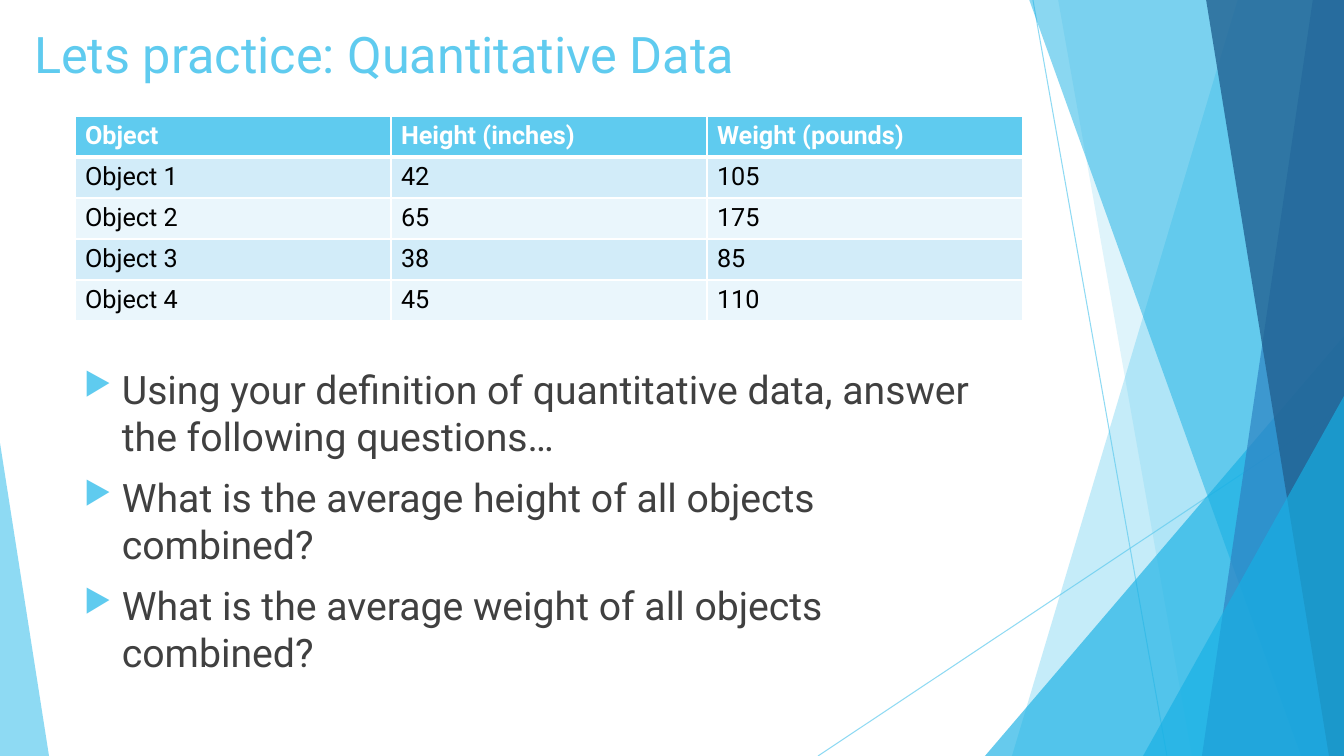
from lxml import etree
from pptx import Presentation
from pptx.dml.color import RGBColor
from pptx.enum.shapes import MSO_CONNECTOR, MSO_SHAPE
from pptx.enum.text import MSO_ANCHOR, MSO_AUTO_SIZE, PP_ALIGN
from pptx.oxml.ns import qn
from pptx.util import Emu, Pt

STRAIGHT = MSO_CONNECTOR.STRAIGHT
TRIANGLE = MSO_SHAPE.ISOSCELES_TRIANGLE
TOP = MSO_ANCHOR.TOP
LEFT = PP_ALIGN.LEFT
NO_AUTOFIT = MSO_AUTO_SIZE.NONE

WIDTH, HEIGHT = 1344, 756
TITLE_ONLY = 5
COLORS = {
    "sky": "5FCBEF",
    "azure": "17B0E4",
    "blue": "2E83C3",
    "navy": "226292",
    "ink": "404040",
    "black": "000000",
    "white": "FFFFFF",
    "band": "D2ECF9",
    "pale": "EAF6FC",
}


def px(length):
    return Emu(round(length * 12192000 / WIDTH))


def rgb(name):
    return RGBColor.from_string(COLORS[name])


class SlideBuilder:
    font_name = "Roboto"

    def __init__(self, slide):
        self.slide = slide
        self.shapes = slide.shapes

    def style_font(self, paragraph, size, color, bold=False):
        font = paragraph.font
        font.name = self.font_name
        font.size = Pt(size)
        font.bold = bold
        font.color.rgb = rgb(color)

    def set_alpha(self, element, percent):
        for color in element.spPr.iter(qn("a:srgbClr")):
            etree.SubElement(color, qn("a:alpha"), val=str(percent * 1000))

    def paint(self, shape, color, opacity):
        shape.shadow.inherit = False
        shape.fill.solid()
        shape.fill.fore_color.rgb = rgb(color)
        shape.line.fill.background()
        self.set_alpha(shape._element, opacity)

    def ray(self, x1, y1, x2, y2):
        ray = self.shapes.add_connector(STRAIGHT, px(x1), px(y1), px(x2), px(y2))
        ray.line.color.rgb = rgb("sky")
        ray.line.width = Pt(0.75)
        self.set_alpha(ray._element, 70)
        etree.SubElement(ray._element.spPr, qn("a:effectLst"))

    def shard(self, top_x, bottom_x, color, opacity):
        outline = self.shapes.build_freeform(px(top_x), px(-1))
        corners = [(WIDTH, -1), (WIDTH, HEIGHT), (bottom_x, HEIGHT)]
        outline.add_line_segments([(px(x), px(y)) for x, y in corners])
        self.paint(outline.convert_to_shape(), color, opacity)

    def wedge(self, left, top, width, apex, color, opacity):
        wedge = self.shapes.add_shape(
            TRIANGLE, px(left), px(top), px(width), px(HEIGHT - top)
        )
        wedge.adjustments[0] = apex
        self.paint(wedge, color, opacity)

    def title(self, text, left, top, width, height):
        title = self.shapes.title
        title.left, title.top = px(left), px(top)
        title.width, title.height = px(width), px(height)
        frame = title.text_frame
        frame.text = text
        frame.word_wrap = True
        frame.auto_size = NO_AUTOFIT
        frame.vertical_anchor = TOP
        frame.paragraphs[0].alignment = LEFT
        self.style_font(frame.paragraphs[0], 36, "sky")

    def cell_borders(self, cell, bottom_width):
        properties = cell._tc.get_or_add_tcPr()
        for side, width in (("L", 1), ("R", 1), ("T", 1), ("B", bottom_width)):
            line = etree.SubElement(properties, qn("a:ln" + side), w=str(Pt(width)))
            fill = etree.SubElement(line, qn("a:solidFill"))
            etree.SubElement(fill, qn("a:srgbClr"), val=COLORS["white"])

    def table(self, rows, left, top, column_width, row_height):
        column_count = len(rows[0])
        table = self.shapes.add_table(
            len(rows), column_count, px(left), px(top),
            px(column_width * column_count), px(row_height * len(rows)),
        ).table
        table.horz_banding = False
        for column in table.columns:
            column.width = px(column_width)
        for r, values in enumerate(rows):
            header = r == 0
            table.rows[r].height = px(row_height)
            fill = "sky" if header else ("pale", "band")[r % 2]
            for c, value in enumerate(values):
                cell = table.cell(r, c)
                cell.text = value
                self.cell_borders(cell, 3 if header else 1)
                cell.fill.solid()
                cell.fill.fore_color.rgb = rgb(fill)
                self.style_font(
                    cell.text_frame.paragraphs[0], 18,
                    "white" if header else "black", header,
                )
            if r == 1:
                for cell in table.rows[r].cells:
                    cell._tc.tcPr.find(qn("a:lnT")).set("w", str(Pt(3)))

    def bullets(self, items, left, top, width, height):
        box = self.shapes.add_textbox(px(left), px(top), px(width), px(height))
        frame = box.text_frame
        frame.word_wrap = True
        for i, item in enumerate(items):
            paragraph = frame.paragraphs[0] if i == 0 else frame.add_paragraph()
            paragraph.text = item
            paragraph.space_before = Pt(10)
            self.style_font(paragraph, 28, "ink")
            properties = paragraph._p.get_or_add_pPr()
            properties.set("marL", str(px(38)))
            properties.set("indent", str(px(-38)))
            bullet_color = etree.Element(qn("a:buClr"))
            etree.SubElement(bullet_color, qn("a:srgbClr"), val=COLORS["sky"])
            bullet_size = etree.Element(qn("a:buSzPct"), val="80000")
            bullet_char = etree.Element(qn("a:buChar"), char="▶")
            default_run = properties.find(qn("a:defRPr"))
            for element in (bullet_color, bullet_size, bullet_char):
                default_run.addprevious(element)


def main():
    deck = Presentation()
    deck.slide_width, deck.slide_height = px(WIDTH), px(HEIGHT)
    builder = SlideBuilder(deck.slides.add_slide(deck.slide_layouts[TITLE_ONLY]))

    builder.ray(1033, 0, 1167, HEIGHT)
    builder.ray(WIDTH, 406, 818, HEIGHT)
    builder.shard(1238, 1012, "sky", 36)
    builder.shard(1058, 1192, "sky", 20)
    builder.wedge(985, 336, 359, 1, "azure", 66)
    builder.shard(1029, 1301, "azure", 50)
    builder.shard(1313, 1202, "blue", 70)
    builder.shard(1206, 1329, "navy", 80)
    builder.wedge(1143, 396, 201, 1, "azure", 66)
    builder.wedge(0, 443, 49, 0, "sky", 70)

    builder.title("Lets practice: Quantitative Data", 24, 18, 948, 145)
    measurements = [
        ("Object", "Height (inches)", "Weight (pounds)"),
        ("Object 1", "42", "105"),
        ("Object 2", "65", "175"),
        ("Object 3", "38", "85"),
        ("Object 4", "45", "110"),
    ]
    builder.table(measurements, 75, 116, 316, 41)
    questions = [
        "Using your definition of quantitative data, answer the following questions…",
        "What is the average height of all objects combined?",
        "What is the average weight of all objects combined?",
    ]
    builder.bullets(questions, 74, 360, 948, 272)
    deck.save("out.pptx")


if __name__ == "__main__":
    main()
